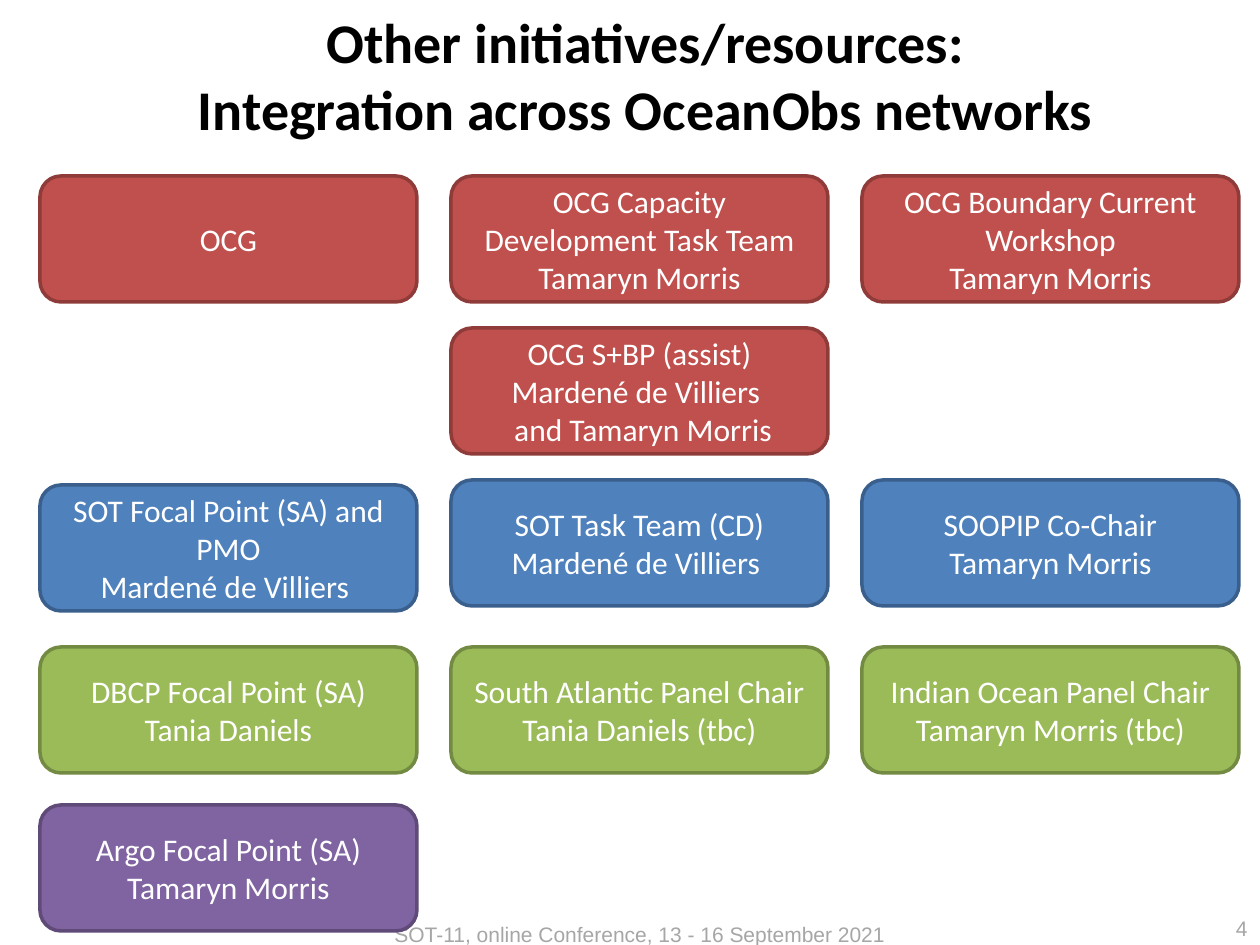
from pptx import Presentation
from pptx.dml.color import RGBColor
from pptx.enum.shapes import MSO_SHAPE
from pptx.enum.text import MSO_ANCHOR, PP_ALIGN
from pptx.util import Emu, Pt

SCALE = 914400 / 126
RED = ("C0504D", "8E3B39")
BLUE = ("4F81BD", "3A5F8C")
GREEN = ("9BBB59", "738A42")
PURPLE = ("8064A2", "5F4A78")
LEFT, STEP = 40, 411
WIDE, HIGH = 377, 126

CARDS = [
    (0, 176, RED, "OCG"),
    (1, 176, RED, "OCG Capacity Development Task Team\nTamaryn Morris"),
    (2, 176, RED, "OCG Boundary Current Workshop\nTamaryn Morris"),
    (1, 328, RED, "OCG S+BP (assist)\nMardené de Villiers \n and Tamaryn Morris"),
    (0, 485, BLUE, "SOT Focal Point (SA) and PMO\nMardené de Villiers "),
    (1, 480, BLUE, "SOT Task Team (CD)\nMardené de Villiers "),
    (2, 480, BLUE, "SOOPIP Co-Chair\nTamaryn Morris"),
    (0, 647, GREEN, "DBCP Focal Point (SA)\nTania Daniels"),
    (1, 647, GREEN, "South Atlantic Panel Chair\nTania Daniels (tbc)"),
    (2, 647, GREEN, "Indian Ocean Panel Chair\nTamaryn Morris (tbc)"),
    (0, 805, PURPLE, "Argo Focal Point (SA)\nTamaryn Morris"),
]


def px(size):
    return Emu(round(size * SCALE))


def tint(code):
    return RGBColor.from_string(code)


class Deck:
    def __init__(self, wide, high):
        self.show = Presentation()
        self.show.slide_width, self.show.slide_height = px(wide), px(high)
        self.slide = self.show.slides.add_slide(self.show.slide_layouts[5])

    def label(self, frame, text, size, face, color, align, anchor, bold=False):
        frame.word_wrap = True
        frame.vertical_anchor = anchor
        frame.text = text
        for line in frame.paragraphs:
            line.alignment = align
            line.font.size = Pt(size)
            line.font.name = face
            line.font.bold = bold
            line.font.color.rgb = tint(color)

    def title(self, text, x, y, w, h):
        box = self.slide.shapes.title
        box.left, box.top, box.width, box.height = map(px, (x, y, w, h))
        self.label(box.text_frame, text, 32, "Calibri", "000000",
                   PP_ALIGN.CENTER, MSO_ANCHOR.TOP, True)

    def note(self, text, x, y, w, h, align, anchor):
        box = self.slide.shapes.add_textbox(*map(px, (x, y, w, h)))
        self.label(box.text_frame, text, 12, "Arial", "A6A6A6", align, anchor)

    def card(self, text, x, y, w, h, fill, edge):
        box = self.slide.shapes.add_shape(
            MSO_SHAPE.ROUNDED_RECTANGLE, *map(px, (x, y, w, h)))
        box.shadow.inherit = False
        box.fill.solid()
        box.fill.fore_color.rgb = tint(fill)
        box.line.color.rgb = tint(edge)
        box.line.width = Pt(2)
        self.label(box.text_frame, text, 18, "Calibri", "FFFFFF",
                   PP_ALIGN.CENTER, MSO_ANCHOR.MIDDLE)


def main():
    deck = Deck(1260, 945)
    deck.note("SOT-11, online Conference, 13 - 16 September 2021",
              382, 915, 615, 38, PP_ALIGN.LEFT, MSO_ANCHOR.TOP)
    deck.title("Other initiatives/resources:\vIntegration across OceanObs networks",
               154, 1, 983, 123)
    deck.note("4", 976, 912, 284, 32, PP_ALIGN.RIGHT, MSO_ANCHOR.MIDDLE)
    for col, top, look, text in CARDS:
        deck.card(text, LEFT + col * STEP, top, WIDE, HIGH, *look)
    deck.show.save("out.pptx")


if __name__ == "__main__":
    main()
